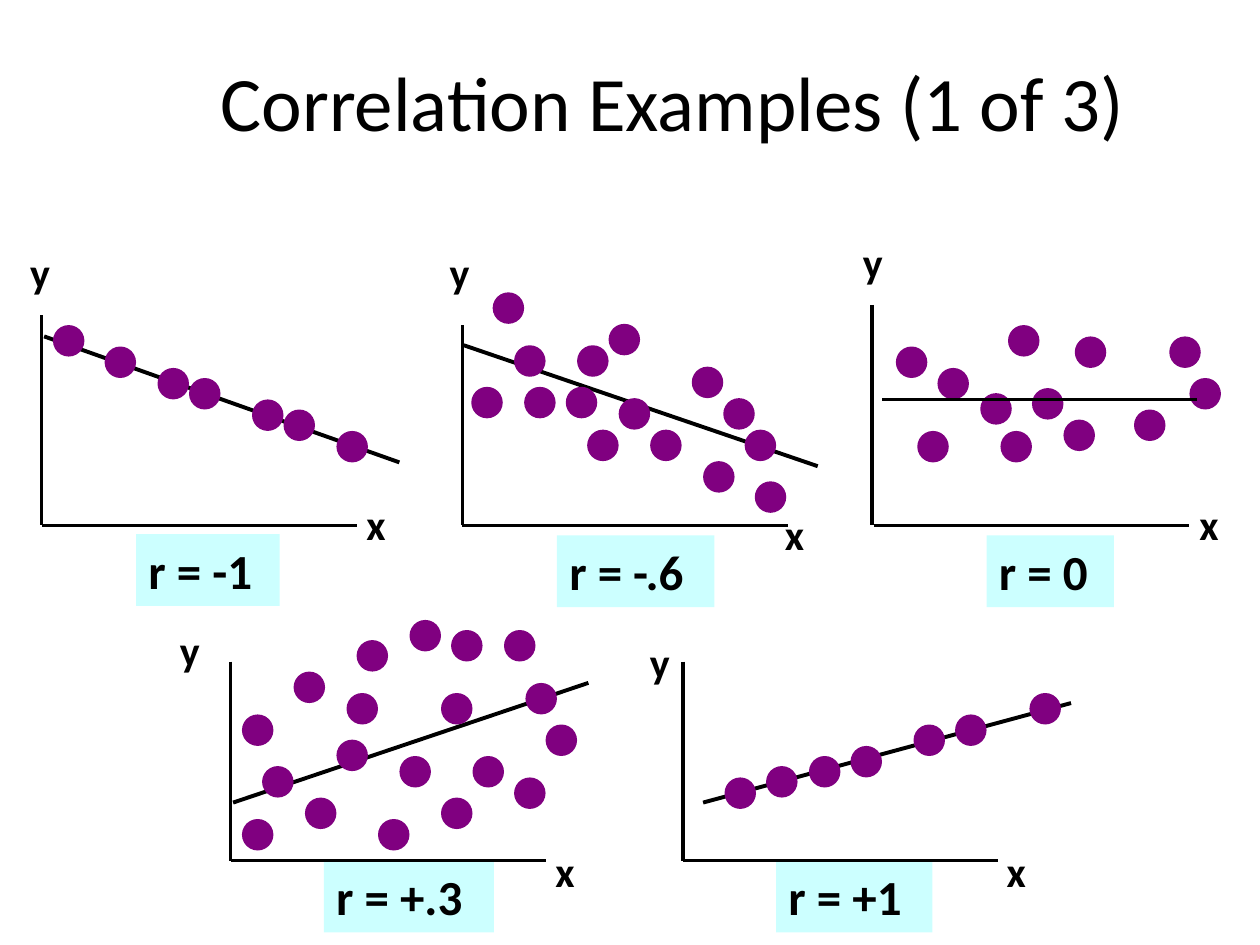
from dataclasses import dataclass

from lxml import etree
from pptx import Presentation
from pptx.dml.color import RGBColor
from pptx.enum.shapes import MSO_CONNECTOR, MSO_SHAPE
from pptx.enum.text import MSO_ANCHOR, MSO_AUTO_SIZE, PP_ALIGN
from pptx.oxml.ns import qn
from pptx.util import Inches, Pt

STRAIGHT = MSO_CONNECTOR.STRAIGHT
OVAL, RECTANGLE = MSO_SHAPE.OVAL, MSO_SHAPE.RECTANGLE
MIDDLE, CENTER = MSO_ANCHOR.MIDDLE, PP_ALIGN.CENTER
NO_AUTOFIT = MSO_AUTO_SIZE.NONE

BLACK = RGBColor(0x00, 0x00, 0x00)
PURPLE = RGBColor(0x80, 0x00, 0x80)
PALE_CYAN = RGBColor(0xCC, 0xFF, 0xFF)
FONT = "Calibri"
DOT_SIZE = 0.25


@dataclass
class ScatterPlot:
    """Positions in inches; dots are the top left corners of their circles."""
    label: str
    label_box: tuple
    y_axis: tuple  # x, top, bottom
    x_axis: tuple  # left, right
    y_name: tuple
    x_name: tuple
    trend: tuple
    dots: list
    trend_width: float = 2.25
    trend_in_front: bool = False


PLOTS = [
    ScatterPlot(
        "r = -1", (1.08, 4.24, 1.14, 0.57), (0.33, 2.5, 4.17), (0.33, 2.83),
        (0.14, 1.91), (2.81, 3.91), (3.17, 3.67, 0.35, 2.67),
        [(0.42, 2.58), (0.83, 2.75), (1.25, 2.92), (1.5, 3), (2, 3.17),
         (2.25, 3.25), (2.67, 3.42)]),
    ScatterPlot(
        "r = -.6", (4.42, 4.25, 1.25, 0.57), (3.67, 2.58, 4.17), (3.67, 6.25),
        (3.47, 1.91), (6.13, 3.99), (6.49, 3.7, 3.68, 2.74),
        [(3.74, 3.07), (3.91, 2.32), (4.08, 2.74), (4.16, 3.07), (4.49, 3.07),
         (4.58, 2.74), (4.66, 3.41), (4.83, 2.57), (4.91, 3.16), (5.16, 3.41),
         (5.49, 2.91), (5.58, 3.66), (5.74, 3.16), (5.91, 3.41), (5.99, 3.82)]),
    ScatterPlot(
        "r = 0", (7.83, 4.25, 1.01, 0.57), (6.92, 2.42, 4.17), (6.94, 9.44),
        (6.75, 1.83), (9.42, 3.91), (7, 3.17, 9.5, 3.17),
        [(7.11, 2.75), (7.28, 3.42), (7.44, 2.92), (7.78, 3.12), (7.94, 3.42),
         (8, 2.58), (8.19, 3.08), (8.44, 3.33), (8.53, 2.67), (9, 3.25),
         (9.28, 2.67), (9.44, 3)],
        trend_width=2, trend_in_front=True),
    ScatterPlot(
        "r = +.3", (2.57, 6.83, 1.35, 0.57), (1.83, 5.25, 6.83), (1.83, 4.33),
        (1.33, 4.91), (4.31, 6.66), (1.85, 6.37, 4.67, 5.42),
        [(1.92, 5.67), (1.92, 6.5), (2.08, 6.08), (2.33, 5.33), (2.42, 6.33),
         (2.67, 5.87), (2.75, 5.5), (2.83, 5.08), (3, 6.5), (3.17, 6),
         (3.25, 4.92), (3.5, 5.5), (3.5, 6.33), (3.58, 5), (3.75, 6), (4, 5),
         (4.08, 6.17), (4.17, 5.42), (4.33, 5.75)]),
    ScatterPlot(
        "r = +1", (6.16, 6.83, 1.24, 0.57), (5.42, 5.25, 6.83), (5.42, 7.92),
        (5.06, 5), (7.89, 6.66), (5.58, 6.37, 8.5, 5.58),
        [(5.75, 6.17), (6.08, 6.08), (6.42, 6), (6.75, 5.92), (7.25, 5.75),
         (7.58, 5.67), (8.17, 5.5)]),
]


class SlideBuilder:
    def __init__(self, slide):
        self.slide = slide

    def format_text(self, shape, text, size, bold=False):
        frame = shape.text_frame
        frame.text = text
        frame.word_wrap = True
        frame.auto_size = NO_AUTOFIT
        paragraph = frame.paragraphs[0]
        paragraph.font.name = FONT
        paragraph.font.size = Pt(size)
        paragraph.font.bold = bold
        paragraph.font.color.rgb = BLACK
        return paragraph

    def title(self, text, box):
        shape = self.slide.shapes.title
        shape.left, shape.top, shape.width, shape.height = map(Inches, box)
        paragraph = self.format_text(shape, text, 44)
        paragraph.alignment = CENTER
        paragraph.line_spacing = 0.8
        shape.text_frame.vertical_anchor = MIDDLE

    def text(self, text, box, size, fill=None):
        shape = self.slide.shapes.add_textbox(*map(Inches, box))
        self.format_text(shape, text, size, bold=True)
        if fill is not None:
            shape.fill.solid()
            shape.fill.fore_color.rgb = fill

    def line(self, ends, width=2):
        connector = self.slide.shapes.add_connector(STRAIGHT, *map(Inches, ends))
        connector.line.color.rgb = BLACK
        connector.line.width = Pt(width)
        properties = connector._element.spPr
        etree.SubElement(properties, qn("a:effectLst"))

    def dot(self, left, top):
        shape = self.slide.shapes.add_shape(
            OVAL, *map(Inches, (left, top, DOT_SIZE, DOT_SIZE)))
        shape.shadow.inherit = False
        shape.fill.solid()
        shape.fill.fore_color.rgb = PURPLE
        shape.line.fill.background()

    def plot(self, plot):
        self.text(plot.label, plot.label_box, 28, PALE_CYAN)
        axis_x, top, bottom = plot.y_axis
        left, right = plot.x_axis
        self.line((axis_x, top, axis_x, bottom))
        self.line((left, bottom, right, bottom))
        for name, corner in (("y", plot.y_name), ("x", plot.x_name)):
            self.text(name, (*corner, 0.39, 0.5), 24)
        if not plot.trend_in_front:
            self.line(plot.trend, plot.trend_width)
        for corner in plot.dots:
            self.dot(*corner)
        if plot.trend_in_front:
            self.line(plot.trend, plot.trend_width)


def main():
    presentation = Presentation()
    presentation.slide_width = Inches(10)
    presentation.slide_height = Inches(7.5)
    title_only = presentation.slide_layouts[5]
    builder = SlideBuilder(presentation.slides.add_slide(title_only))
    builder.title("Correlation Examples (1 of 3)", (1.08, 0.33, 8.52, 1.08))
    for plot in PLOTS:
        builder.plot(plot)
    presentation.save("out.pptx")


if __name__ == "__main__":
    main()
